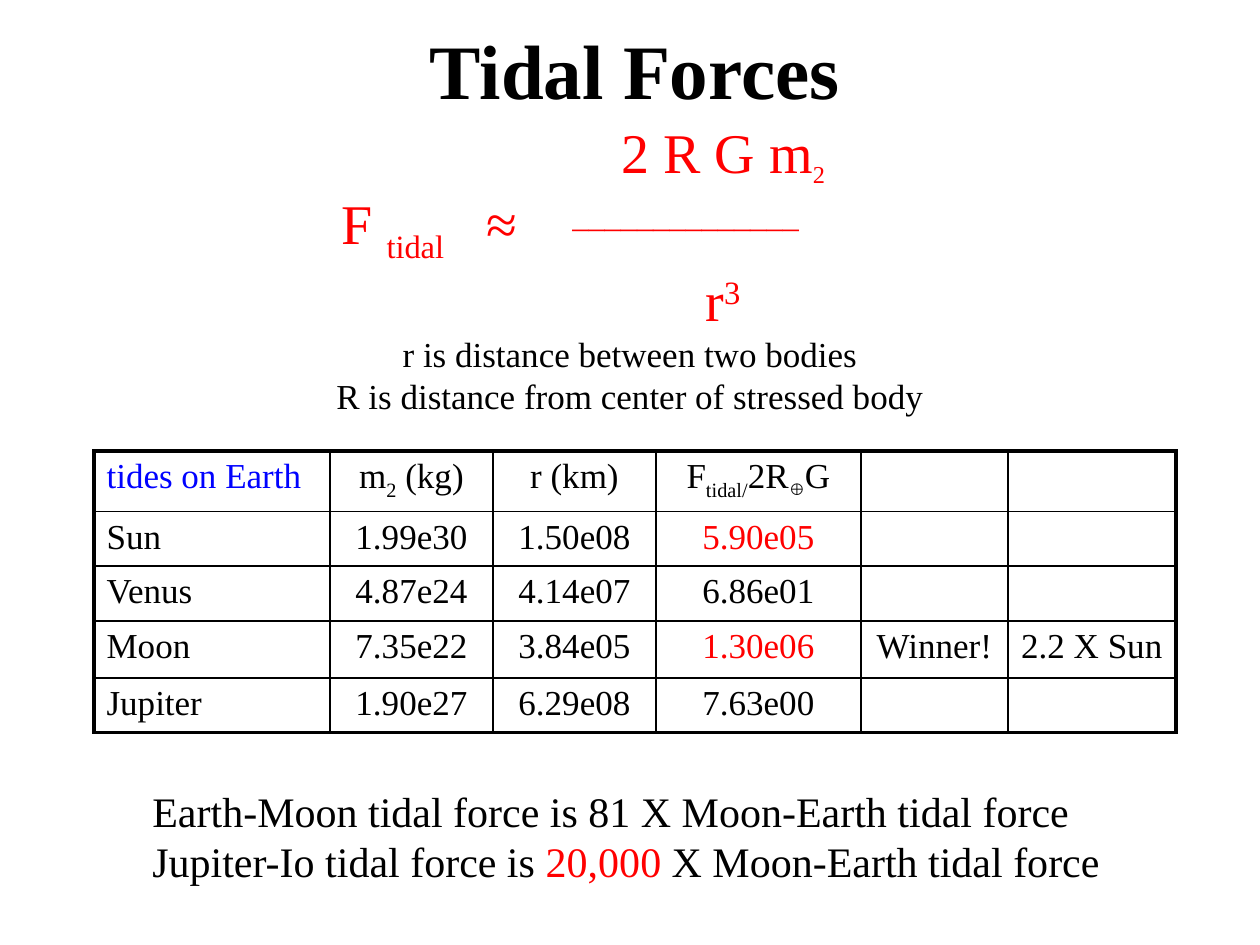
"""Build the tidal forces slide: formula, comparison table and closing remarks."""
from dataclasses import dataclass

from lxml import etree
from pptx import Presentation
from pptx import util as u
from pptx.dml.color import RGBColor
from pptx.enum import text
from pptx.oxml import ns

EMU_PER_PX = 914400 / 126
FONT = "Times New Roman"
COLORS = {"black": "000000", "red": "FF0000", "blue": "0002FF"}
LEFT, CENTER = text.PP_ALIGN.LEFT, text.PP_ALIGN.CENTER


@dataclass(frozen=True)
class Run:
    text: str
    size: int = 20
    color: str = "black"
    baseline: int = 0
    font: str = FONT
    bold: bool = False


@dataclass(frozen=True)
class Line:
    runs: tuple
    align: text.PP_ALIGN = LEFT
    tabs: tuple = ()


@dataclass(frozen=True)
class Box:
    left: int
    top: int
    width: int
    height: int
    lines: tuple
    wrap: bool = True
    anchor: text.MSO_ANCHOR = text.MSO_ANCHOR.TOP


def px(length: int) -> int:
    return u.Emu(round(length * EMU_PER_PX))


def rgb(name: str) -> RGBColor:
    return RGBColor.from_string(COLORS[name])


def formula(content: str, **options) -> Run:
    return Run(content, **{"size": 32, "color": "red", **options})


def remark(content: str, **options) -> Run:
    return Run(content, size=24, **options)


BOXES = (
    Box(84, 0, 1102, 138, (Line((Run("Tidal Forces", size=44, bold=True),), CENTER),),
        anchor=text.MSO_ANCHOR.MIDDLE),
    Box(21, 111, 1218, 301, (
        Line((formula("\t2 R G m"), formula("2", size=24, baseline=-25)), tabs=(588,)),
        Line((formula("\tF "), formula("tidal", baseline=-25), formula("\t≈\t"),
              formula("______________", baseline=30)), tabs=(308, 453, 539)),
        Line((formula("\tr"), formula("3", baseline=30)), tabs=(672,)),
        Line((Run("r is distance between two bodies"),), CENTER),
        Line((Run("R is distance from center of stressed body"),), CENTER),
    )),
    Box(140, 779, 982, 115, (
        Line((remark("Earth-Moon tidal force is 81 X Moon-Earth tidal force"),)),
        Line((remark("Jupiter-Io tidal force is "), remark("20,000", color="red"),
              remark(" X Moon-Earth tidal force"))),
    ), wrap=False),
)

COLUMNS = (236, 163, 163, 205, 147, 168)
ROWS = (55, 54, 54, 57, 55)
CELLS = (
    ((Run("tides on Earth", color="blue"),),
     (Run("m"), Run("2", baseline=-25), Run(" (kg)")),
     (Run("r (km)"),),
     (Run("F"), Run("tidal/", baseline=-25), Run("2R"),
      Run("⊕", size=16, baseline=-25, font="Arial"), Run("G")),
     (), ()),
    ((Run("Sun"),), (Run("1.99e30"),), (Run("1.50e08"),), (Run("5.90e05", color="red"),), (), ()),
    ((Run("Venus"),), (Run("4.87e24"),), (Run("4.14e07"),), (Run("6.86e01"),), (), ()),
    ((Run("Moon"),), (Run("7.35e22"),), (Run("3.84e05"),), (Run("1.30e06", color="red"),),
     (Run("Winner!"),), (Run("2.2 X Sun"),)),
    ((Run("Jupiter"),), (Run("1.90e27"),), (Run("6.29e08"),), (Run("7.63e00"),), (), ()),
)


def write_run(paragraph, content: str, *, size, color, baseline, font, bold) -> None:
    run = paragraph.add_run()
    run.text = content
    run.font.size, run.font.name, run.font.bold = u.Pt(size), font, bold
    run.font.color.rgb = rgb(color)
    if baseline:
        run.font._element.set("baseline", str(baseline * 1000))


def write_line(paragraph, line: Line) -> None:
    paragraph.alignment = line.align
    if line.tabs:
        tabs = etree.SubElement(paragraph._p.get_or_add_pPr(), ns.qn("a:tabLst"))
        for position in line.tabs:
            etree.SubElement(tabs, ns.qn("a:tab"), pos=str(px(position)), algn="l")
    for run in line.runs:
        write_run(paragraph, run.text, size=run.size, color=run.color,
                  baseline=run.baseline, font=run.font, bold=run.bold)


def draw_box(slide, box: Box) -> None:
    shape = slide.shapes.add_textbox(px(box.left), px(box.top), px(box.width), px(box.height))
    frame = shape.text_frame
    frame.word_wrap, frame.vertical_anchor = box.wrap, box.anchor
    for index, line in enumerate(box.lines):
        write_line(frame.add_paragraph() if index else frame.paragraphs[0], line)


def draw_borders(cell, outer: dict) -> None:
    properties = cell._tc.get_or_add_tcPr()
    for index, (side, is_outer) in enumerate(outer.items()):
        width = u.Pt(2.25 if is_outer else 1)
        border = etree.Element(ns.qn(f"a:ln{side}"), w=str(width))
        fill = etree.SubElement(border, ns.qn("a:solidFill"))
        etree.SubElement(fill, ns.qn("a:srgbClr"), val=COLORS["black"])
        properties.insert(index, border)


def draw_table(slide, left: int, top: int) -> None:
    frame = slide.shapes.add_table(len(ROWS), len(COLUMNS), px(left), px(top),
                                   px(sum(COLUMNS)), px(sum(ROWS)))
    table = frame.table
    table.first_row = table.horz_banding = False
    for column, width in zip(table.columns, COLUMNS):
        column.width = px(width)
    last_row, last_column = len(ROWS) - 1, len(COLUMNS) - 1
    for i, (row, height) in enumerate(zip(table.rows, ROWS)):
        row.height = px(height)
        for j, cell in enumerate(row.cells):
            cell.fill.background()
            write_line(cell.text_frame.paragraphs[0], Line(CELLS[i][j], CENTER if j else LEFT))
            draw_borders(cell, {"L": j == 0, "R": j == last_column, "T": i == 0, "B": i == last_row})


def main() -> None:
    presentation = Presentation()
    presentation.slide_width, presentation.slide_height = px(1260), px(945)
    slide = presentation.slides.add_slide(presentation.slide_layouts[6])
    for box in BOXES:
        draw_box(slide, box)
    draw_table(slide, 94, 451)
    presentation.save("out.pptx")


if __name__ == "__main__":
    main()
